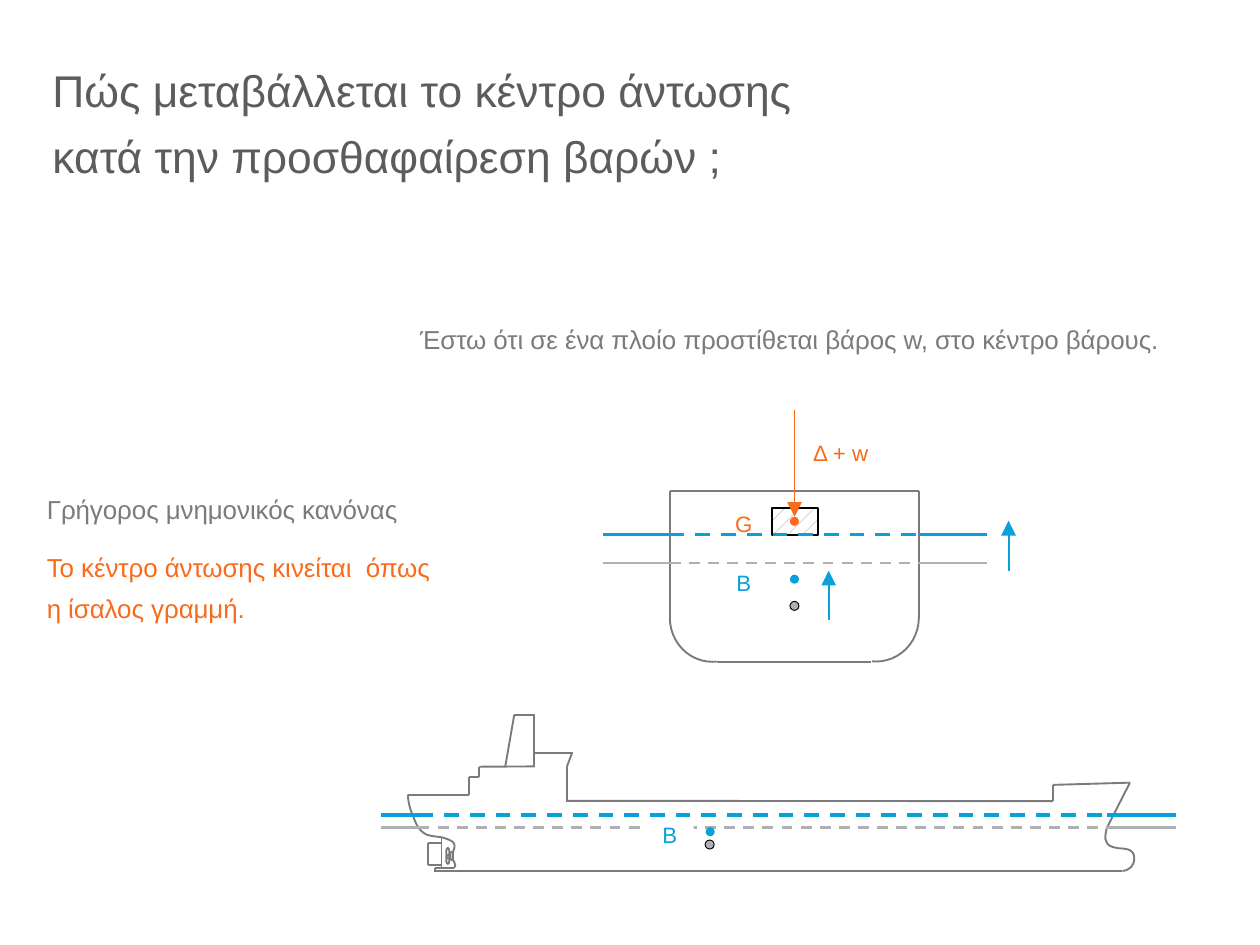
from lxml import etree
from pptx import Presentation
from pptx.dml.color import RGBColor
from pptx.enum.dml import MSO_LINE, MSO_PATTERN
from pptx.enum.shapes import MSO_CONNECTOR, MSO_SHAPE
from pptx.enum.text import MSO_ANCHOR, MSO_AUTO_SIZE, PP_ALIGN
from pptx.oxml.ns import qn
from pptx.util import Inches, Pt

STRAIGHT = MSO_CONNECTOR.STRAIGHT
DASH = MSO_LINE.DASH
HATCH = MSO_PATTERN.WIDE_UPWARD_DIAGONAL
RECT, OVAL, ARC = MSO_SHAPE.RECTANGLE, MSO_SHAPE.OVAL, MSO_SHAPE.ARC
CHORD, SNIP = MSO_SHAPE.CHORD, MSO_SHAPE.SNIP_2_SAME_RECTANGLE
TOP, MIDDLE = MSO_ANCHOR.TOP, MSO_ANCHOR.MIDDLE
LEFT, CENTER = PP_ALIGN.LEFT, PP_ALIGN.CENTER


class Theme:
    font = "Arial"
    title, body, label = 12, 7, 6
    dark = RGBColor.from_string("5B5C5E")
    gray = RGBColor.from_string("797B7E")
    pale = RGBColor.from_string("AFB0B2")
    blue = RGBColor.from_string("08A1D9")
    orange = RGBColor.from_string("F96A1B")
    white = RGBColor.from_string("FFFFFF")
    black = RGBColor.from_string("000000")


# Columns and rows are hundredths of an inch
CELL = Inches(0.01)

deck = Presentation()
deck.slide_width, deck.slide_height = Pt(340.25), Pt(255.13)
slide = deck.slides.add_slide(deck.slide_layouts[1])
shapes = slide.shapes


def write(shape, *lines, size=Theme.label, hues=(Theme.gray,), align=LEFT,
          anchor=TOP, lead=1.2, gap=0, inset=0):
    frame = shape.text_frame
    frame.word_wrap = True
    frame.auto_size = MSO_AUTO_SIZE.NONE
    frame.vertical_anchor = anchor
    frame.margin_left = frame.margin_right = inset * CELL
    frame.margin_top = frame.margin_bottom = inset * CELL
    for i, line in enumerate(lines):
        para = frame.add_paragraph() if i else frame.paragraphs[0]
        para.text = line
        para.alignment, para.line_spacing = align, lead
        para.space_before = Pt(0)
        para.space_after = Pt(gap if i < len(lines) - 1 else 0)
        for run in para.runs:
            run.font.name, run.font.size = Theme.font, Pt(size)
            run.font.color.rgb = hues[i]


def stroke(home, *ends, hue=Theme.gray, weight=0.5, dash=False, arrow=False):
    link = home.add_connector(STRAIGHT, *[round(n * CELL) for n in ends])
    link.line.color.rgb, link.line.width = hue, Pt(weight)
    if dash:
        link.line.dash_style = DASH
    if arrow:
        etree.SubElement(link.line._get_or_add_ln(), qn("a:tailEnd"),
                         type="triangle", w="sm", len="sm")
    etree.SubElement(link.element.spPr, qn("a:effectLst"))


# Title and body text
title, body = shapes.title, slide.placeholders[1]
for holder, box in ((title, (19.7, 20, 433, 47)), (body, (157.6, 118.4, 295, 217))):
    holder.left, holder.top, holder.width, holder.height = [
        round(n * CELL) for n in box]
write(title, "Πώς μεταβάλλεται το κέντρο άντωσης\vκατά την προσθαφαίρεση βαρών ;",
      size=Theme.title, hues=(Theme.dark,), anchor=MIDDLE, lead=1.25)
write(body, "Έστω ότι σε ένα πλοίο προστίθεται βάρος w, στο κέντρο βάρους.",
      size=Theme.body, lead=1.25)
props = body.text_frame.paragraphs[0]._p.get_or_add_pPr()
props.set("marL", "0")
props.set("indent", "0")
etree.SubElement(props, qn("a:buNone"))

# Rule of thumb
note = shapes.add_textbox(*[round(n * CELL) for n in (17.6, 181.4, 144.4, 65)])
write(note, "Γρήγορος μνημονικός κανόνας",
      "Το κέντρο άντωσης κινείται  όπως η ίσαλος γραμμή.",
      size=Theme.body, hues=(Theme.gray, Theme.orange), lead=1.3, gap=5)

# Added weight
load = shapes.add_shape(RECT, *[round(n * CELL) for n in (289.4, 190.4, 17.3, 10.3)])
load.shadow.inherit = False
load.fill.patterned()
load.fill.pattern = HATCH
load.fill.fore_color.rgb, load.fill.back_color.rgb = Theme.pale, Theme.white
load.line.color.rgb, load.line.width = Theme.black, Pt(0.5)
force = shapes.add_textbox(301 * CELL, 159 * CELL, 38 * CELL, 19 * CELL)
write(force, "Δ + w", hues=(Theme.orange,), anchor=MIDDLE, inset=4)

# Cross section of the hull
hull = shapes.add_group_shape().shapes
for ends in ((251.2, 184.2, 344.6, 184.2), (251.2, 184.2, 251.2, 232),
             (344.6, 184.2, 344.6, 232), (269, 248.1, 326.6, 248.1)):
    stroke(hull, *ends)
for box, turn, first, last in (((312.1, 215.6, 33, 32), 90, 162, 3.26),
                               ((251.2, 215.1, 32, 33), 180, 158.74, 0)):
    bilge = hull.add_shape(ARC, *[round(n * CELL) for n in box])
    bilge.rotation = turn
    bilge.adjustments[0], bilge.adjustments[1] = first, last
    bilge.shadow.inherit = False
    bilge.fill.background()
    bilge.line.color.rgb, bilge.line.width = Theme.gray, Pt(0.5)

# Side view: straight edges
ship = shapes.add_group_shape().shapes
for ends in (
    (163, 326.6, 421, 326.6), (423.8, 293.5, 415.2, 310.3),
    (423.8, 293.5, 394.9, 294.3), (394.9, 300.4, 394.9, 294.3),
    (212.6, 300.3, 394.9, 300.4), (212.6, 300.6, 212.6, 287.5),
    (200.6, 287.4, 179.8, 287.5), (179.8, 291.5, 179.8, 287.5),
    (214.8, 282.3, 200.4, 282.3), (214.6, 282.3, 212.6, 287.5),
    (179.8, 291.5, 176.1, 291.5), (176.1, 298, 176.1, 291.5),
    (176.1, 298, 153, 298), (200.6, 268, 192.7, 268), (200.4, 287.4, 200.4, 268),
    (189.5, 287.5, 192.9, 268), (170.3, 325.4, 163, 325.4),
    (163, 327, 163, 325.4), (160.6, 316, 160.6, 324.3),
    (160.6, 324.3, 165.8, 324.3), (160.6, 316, 165.8, 316),
    (165.6, 314.2, 165.6, 325.4),
):
    stroke(ship, *ends)

# Side view: bow and stern, cubic curves as start plus three points each
bow = [(421, 326.6), (422, 326.5), (424, 326), (425, 324), (425.4, 323), (426, 320),
       (424, 319), (423, 318), (419, 318.4), (417, 317.5), (415.5, 317), (415, 316),
       (414.6, 314.5), (414.4, 313), (415.2, 310.3), (415.2, 310.3)]
stern = [(153, 298), (153.2, 301), (154, 304), (155, 306), (156, 309), (157, 311),
         (159, 312.4), (161, 314), (165, 313.5), (167, 314.4), (169, 315), (170, 315.6),
         (170.4, 316.5), (170.8, 317), (170.3, 319), (170, 319.4), (169.8, 320),
         (169, 320), (168.4, 320.3), (168, 320.5), (168, 321), (168.4, 321.4),
         (169, 321.6), (169.6, 322), (170, 322.5), (170.4, 323), (170.7, 324),
         (170.8, 324.4), (170.8, 325), (170.5, 325.2), (170.3, 325.4)]
STEPS = 6
for knots in (bow, stern):
    track = []
    for i in range(0, len(knots) - 1, 3):
        for t in [k / STEPS for k in range(1, STEPS + 1)]:
            mix = ((1 - t) ** 3, 3 * t * (1 - t) ** 2, 3 * t * t * (1 - t), t ** 3)
            track.append([round(CELL * sum(m * knot[axis] for m, knot
                                           in zip(mix, knots[i:i + 4])))
                          for axis in (0, 1)])
    pen = ship.build_freeform(*[round(n * CELL) for n in knots[0]])
    pen.add_line_segments(track, close=False)
    curve = pen.convert_to_shape()
    curve.shadow.inherit = False
    curve.fill.background()
    curve.line.color.rgb, curve.line.width = Theme.gray, Pt(0.5)

# Propeller
for kind, box, turn, tune in (
    (SNIP, (167.9, 320.4, 3, 1), 270, (0.5, 0.06)),
    (OVAL, (167.4, 321, 1.2, 3), 0, ()),
    (CHORD, (167.4, 320, 2.6, 2), 0, (54.27, 162)),
    (OVAL, (167.4, 318, 1.2, 3), 0, ()),
):
    blade = ship.add_shape(kind, *[round(n * CELL) for n in box])
    blade.rotation = turn
    for i, value in enumerate(tune):
        blade.adjustments[i] = value
    blade.shadow.inherit = False
    blade.fill.solid()
    blade.fill.fore_color.rgb = Theme.white
    blade.line.color.rgb, blade.line.width = Theme.gray, Pt(0.5)

# Waterlines before and after loading, with the letters between them
section, side = (226, 251.2, 344.6, 370), (143, 157, 415.2, 441)
for hue, weight, levels in ((Theme.pale, 0.75, (211.1, 310.3)),
                            (Theme.blue, 1, (200.5, 305.5))):
    if hue == Theme.blue:
        for text, tint, col, row in (("G", Theme.orange, 270, 190.4),
                                     ("Β", Theme.blue, 270, 212.5),
                                     ("Β", Theme.blue, 242.2, 307)):
            tag = shapes.add_shape(RECT, *[round(n * CELL) for n in (col, row, 18, 10)])
            tag.shadow.inherit = False
            tag.fill.solid()
            tag.fill.fore_color.rgb = Theme.white
            tag.line.fill.background()
            write(tag, text, hues=(tint,), align=CENTER, anchor=MIDDLE)
    for cols, row in zip((section, side), levels):
        for i in range(3):
            stroke(shapes, cols[i], row, cols[i + 1], row,
                   hue=hue, weight=weight, dash=i == 1)

# Centres of gravity and buoyancy
for hue, col, row in ((Theme.pale, 296.3, 225.5), (Theme.pale, 264.5, 315),
                      (Theme.orange, 296.3, 193.8), (Theme.blue, 296.3, 215.5),
                      (Theme.blue, 264.7, 310.2)):
    dot = shapes.add_shape(OVAL, *[round(n * CELL) for n in (col, row, 3.4, 3.4)])
    dot.shadow.inherit = False
    dot.fill.solid()
    dot.fill.fore_color.rgb = hue
    if hue == Theme.pale:
        dot.line.color.rgb, dot.line.width = Theme.black, Pt(0.25)
    else:
        dot.line.fill.background()

# Arrows
for hue, col, start, stop in ((Theme.blue, 378.3, 214, 195.3),
                              (Theme.orange, 298, 153.6, 193.8),
                              (Theme.blue, 310.8, 232.6, 214)):
    stroke(shapes, col, start, col, stop, hue=hue, arrow=True)

deck.save("out.pptx")
